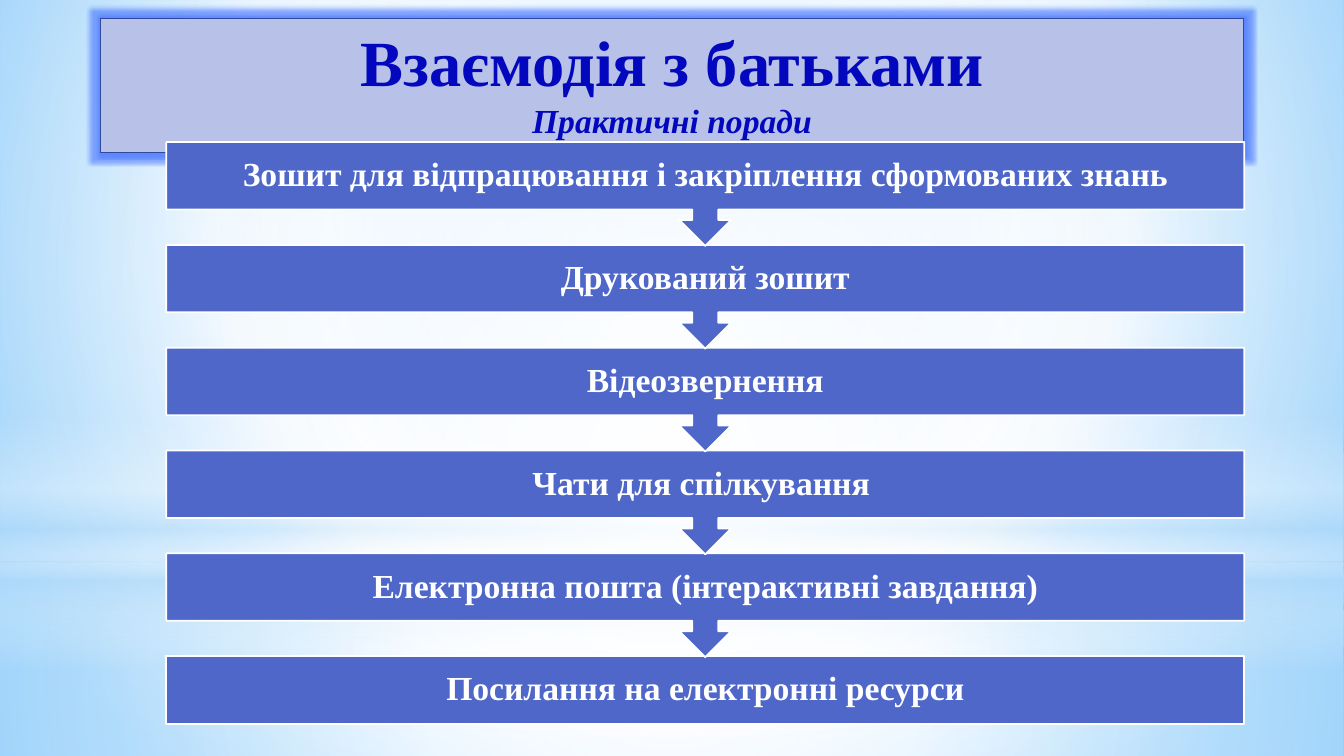
from lxml import etree
from pptx import Presentation
from pptx import util as u
from pptx.dml.color import RGBColor
from pptx.enum import shapes, text
from pptx.oxml.ns import qn

HEADING = "Взаємодія з батьками"
SUBHEADING = "Практичні поради"
STEPS = [
    "Зошит для відпрацювання і закріплення сформованих знань",
    "Друкований зошит",
    "Відеозвернення",
    "Чати для спілкування ",
    "Електронна пошта (інтерактивні завдання)",
    "Посилання на електронні ресурси",
]
FONT = "Times New Roman"
STEP_FILL, WHITE, SKY = "4E67C8", "FFFFFF", "B4DCFA"
HEADING_FILL, HEADING_LINE, HEADING_TEXT, GLOW = "B8C2E9", "31489F", "0307BD", "4775FF"
CENTRE = (50, 50, 50, 50)
BACKDROP = [(0, "9ED5FF", 100), (60, WHITE, 100), (100, "5BB9FF", 100)]
RECT, OVAL = shapes.MSO_SHAPE.RECTANGLE, shapes.MSO_SHAPE.OVAL
LIGHTS = [
    (RECT, 5.58, 1.92, [(0, WHITE, 91), (37, WHITE, 76), (100, SKY, 79)], CENTRE),
    (RECT, 0, 5.58, [(0, WHITE, 89), (48, WHITE, 62), (100, SKY, 79)], CENTRE),
    (RECT, 4.12, 2.5, [(0, WHITE, 0), (29, WHITE, 30), (45, SKY, 40),
                       (55, WHITE, 26), (65, SKY, 60), (100, WHITE, 0)], None),
    (OVAL, 1.75, 5.58, [(0, WHITE, 100), (56, WHITE, 0)], CENTRE),
]
SLIDE_W, SLIDE_H = 13.33, 7.5
STEP_LEFT, STEP_TOP, STEP_W = 1.65, 1.41, 10.69
STEP_PITCH, BOX_H, CALLOUT_H = 1.02, 0.67, 1.03


def colour(code):
    return RGBColor.from_string(code)


def add_colour(parent, code, opacity):
    tone = etree.SubElement(parent, qn("a:srgbClr"), val=code)
    etree.SubElement(tone, qn("a:alpha"), val=str(opacity * 1000))


def set_gradient(fill, owner, stops, focus):
    fill.gradient()
    gradient = owner.find(".//" + qn("a:gradFill"))
    for child in list(gradient):
        gradient.remove(child)
    stop_list = etree.SubElement(gradient, qn("a:gsLst"))
    for position, code, opacity in stops:
        stop = etree.SubElement(stop_list, qn("a:gs"), pos=str(position * 1000))
        add_colour(stop, code, opacity)
    if focus:
        spread = etree.SubElement(gradient, qn("a:path"))
        spread.set("path", "circle")
        sides = {side: str(value * 1000) for side, value in zip("ltrb", focus)}
        etree.SubElement(spread, qn("a:fillToRect"), **sides)
    else:
        etree.SubElement(gradient, qn("a:lin"), ang="5400000", scaled="0")


def add_part(slide, kind, left, top, width, height):
    part = slide.shapes.add_shape(kind, *map(u.Inches, (left, top, width, height)))
    part.shadow.inherit = False
    return part


def paint(part, fill, line, weight):
    part.fill.solid()
    part.fill.fore_color.rgb = colour(fill)
    part.line.color.rgb = colour(line)
    part.line.width = u.Pt(weight)


def centred_paragraph(part, code):
    frame = part.text_frame
    frame.word_wrap = True
    frame.vertical_anchor = text.MSO_ANCHOR.MIDDLE
    paragraph = frame.paragraphs[0]
    paragraph.alignment = text.PP_ALIGN.CENTER
    paragraph.font.name = FONT
    paragraph.font.bold = True
    paragraph.font.color.rgb = colour(code)
    return paragraph


def add_heading(slide):
    heading = add_part(slide, RECT, 1, 0.18, 11.33, 1.33)
    paint(heading, HEADING_FILL, HEADING_LINE, 0.75)
    effects = heading._element.spPr.find(qn("a:effectLst"))
    glow = etree.SubElement(effects, qn("a:glow"), rad=str(u.Pt(5)))
    add_colour(glow, GLOW, 60)
    paragraph = centred_paragraph(heading, HEADING_TEXT)
    heading.text_frame.margin_top = 0
    heading.text_frame.margin_bottom = u.Inches(0.08)
    main = paragraph.add_run()
    main.text = HEADING
    main.font.size = u.Pt(46)
    paragraph.add_line_break()
    sub = paragraph.add_run()
    sub.text = SUBHEADING
    sub.font.size = u.Pt(24)
    sub.font.italic = True


def add_step(slide, index, label):
    last = index == len(STEPS) - 1
    kind = RECT if last else shapes.MSO_SHAPE.DOWN_ARROW_CALLOUT
    step = add_part(slide, kind, STEP_LEFT, STEP_TOP + index * STEP_PITCH,
                    STEP_W, BOX_H if last else CALLOUT_H)
    paint(step, STEP_FILL, WHITE, 1.25)
    paragraph = centred_paragraph(step, WHITE)
    paragraph.text = label
    paragraph.font.size = u.Pt(24)
    paragraph.line_spacing = 0.9


def main():
    deck = Presentation()
    deck.slide_width, deck.slide_height = u.Inches(SLIDE_W), u.Inches(SLIDE_H)
    slide = deck.slides.add_slide(deck.slide_layouts[6])
    set_gradient(slide.background.fill, slide._element, BACKDROP, (20, 10, 20, 60))
    for kind, top, height, stops, focus in LIGHTS:
        light = add_part(slide, kind, 0, top, SLIDE_W, height)
        light.line.fill.background()
        set_gradient(light.fill, light._element, stops, focus)
    add_heading(slide)
    for index, label in reversed(list(enumerate(STEPS))):
        add_step(slide, index, label)
    deck.save("out.pptx")


if __name__ == "__main__":
    main()
